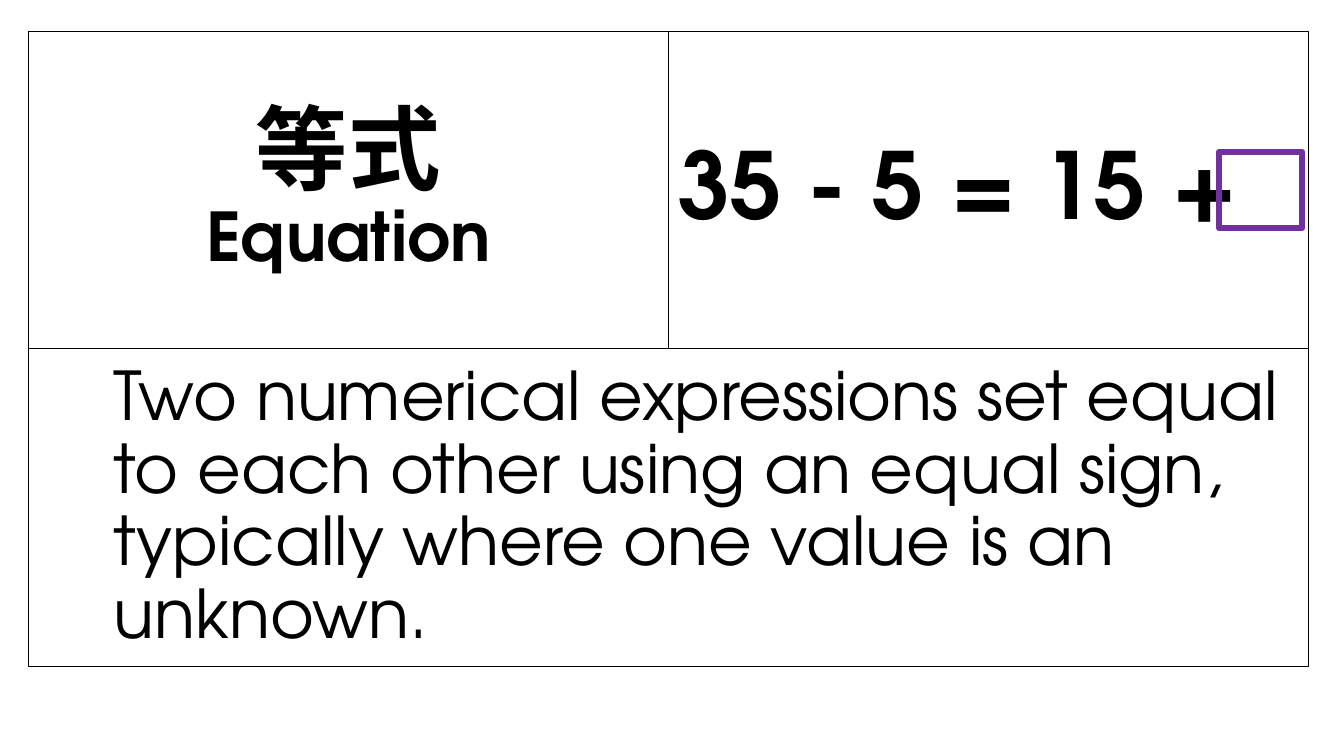
from typing import NamedTuple

import pptx
import pptx.dml.color
import pptx.enum.shapes
import pptx.enum.text
import pptx.util

COLOURS = {"ink": "000000", "unknown": "7030A0"}
LATIN_FONT = "TeX Gyre Adventor"
CHINESE_FONT = "Roboto"
ALIGN = pptx.enum.text.PP_ALIGN

GRID_LEFT, GRID_TOP = 0.28, 0.31
COLUMN_WIDTH, ROW_HEIGHT = 6.35, 3.15


class Span(NamedTuple):
    text: str
    size: int
    font: str = LATIN_FONT
    bold: bool = True


class Cell(NamedTuple):
    column: int
    row: int
    columns: int
    lines: list[Span]
    align: ALIGN = ALIGN.LEFT
    indent: float = 0


CELLS = [
    Cell(0, 0, 1, [Span("等式", 66, CHINESE_FONT), Span("Equation", 48)], ALIGN.CENTER),
    Cell(1, 0, 1, [Span("35 - 5 = 15 +", 66)]),
    Cell(0, 1, 2, [Span("Two numerical expressions set equal to each other using an "
                        "equal sign, typically where one value is an unknown.",
                        48, bold=False)], indent=0.75),
]


def colour(name: str) -> pptx.dml.color.RGBColor:
    return pptx.dml.color.RGBColor.from_string(COLOURS[name])


def add_outline(page, column: float, row: float, columns: float, rows: float,
                line_colour: str, line_width: float):
    """Draw an unfilled rectangle placed in grid columns and rows."""
    box = page.shapes.add_shape(
        pptx.enum.shapes.MSO_SHAPE.RECTANGLE,
        pptx.util.Inches(GRID_LEFT + column * COLUMN_WIDTH),
        pptx.util.Inches(GRID_TOP + row * ROW_HEIGHT),
        pptx.util.Inches(columns * COLUMN_WIDTH),
        pptx.util.Inches(rows * ROW_HEIGHT))
    box.shadow.inherit = False
    box.fill.background()
    box.line.color.rgb = colour(line_colour)
    box.line.width = pptx.util.Pt(line_width)
    return box


def add_cell(page, cell: Cell) -> None:
    box = add_outline(page, cell.column, cell.row, cell.columns, 1, "ink", 0.75)
    frame = box.text_frame
    frame.word_wrap = True
    frame.vertical_anchor = pptx.enum.text.MSO_ANCHOR.MIDDLE
    para = frame.paragraphs[0]
    para.alignment = cell.align
    para.line_spacing = 0.9
    if cell.indent:
        properties = para._p.get_or_add_pPr()
        properties.set("marL", str(pptx.util.Inches(cell.indent)))
        properties.set("indent", "0")
    for index, line in enumerate(cell.lines):
        if index:
            para.add_line_break()
        span = para.add_run()
        span.text = line.text
        span.font.name = line.font
        span.font.size = pptx.util.Pt(line.size)
        span.font.bold = line.bold
        span.font.color.rgb = colour("ink")


def main() -> None:
    deck = pptx.Presentation()
    deck.slide_width = pptx.util.Inches(13.33)
    deck.slide_height = pptx.util.Inches(7.5)
    page = deck.slides.add_slide(deck.slide_layouts[6])
    for cell in CELLS:
        add_cell(page, cell)
    add_outline(page, 1.86, 0.38, 0.13, 0.24, "unknown", 4.5)
    deck.save("out.pptx")


if __name__ == "__main__":
    main()
